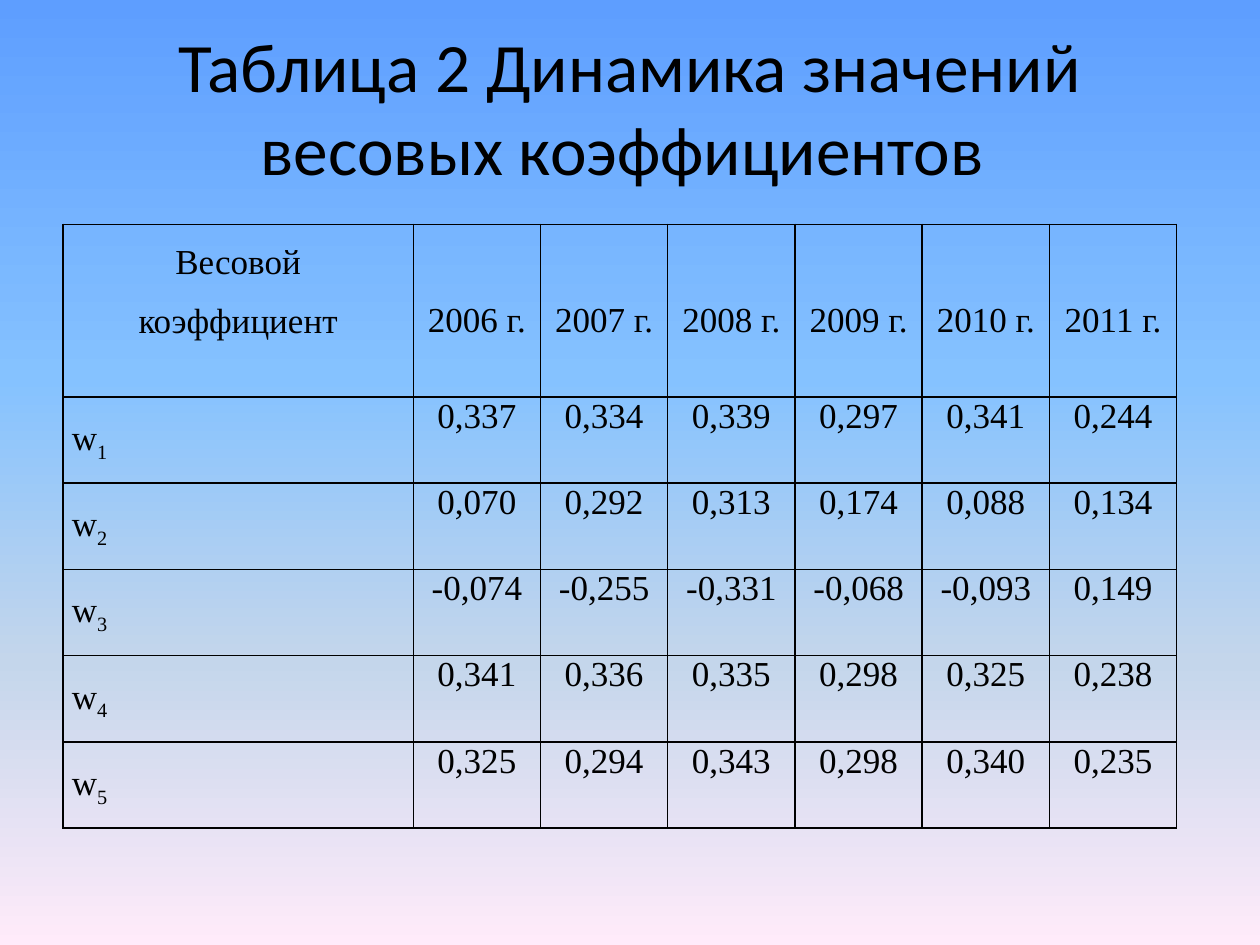
from lxml.etree import SubElement
from pptx import Presentation
from pptx.dml.color import RGBColor
from pptx.enum.text import MSO_ANCHOR, MSO_AUTO_SIZE, PP_ALIGN
from pptx.oxml.ns import qn
from pptx.util import Inches, Pt

CENTER, JUSTIFY = PP_ALIGN.CENTER, PP_ALIGN.JUSTIFY
TOP, MIDDLE = MSO_ANCHOR.TOP, MSO_ANCHOR.MIDDLE
COLORS = {"ink": "000000", "sky": "5E9EFF", "light": "85C2FF",
          "mist": "C4D6EB", "rose": "FFEBFA"}
STOPS = [(0, "sky"), (40, "light"), (70, "mist"), (100, "rose")]
YEARS = range(2006, 2012)
VALUES = [
    ["0,337", "0,334", "0,339", "0,297", "0,341", "0,244"],
    ["0,070", "0,292", "0,313", "0,174", "0,088", "0,134"],
    ["-0,074", "-0,255", "-0,331", "-0,068", "-0,093", "0,149"],
    ["0,341", "0,336", "0,335", "0,298", "0,325", "0,238"],
    ["0,325", "0,294", "0,343", "0,298", "0,340", "0,235"],
]
HEAD, LABEL, YEAR = 2.78, 1.37, 1.01  # first column, first row, year column
ROW = LABEL / 2
INSETS = {"margin_left": Inches(0.07), "margin_right": Inches(0.07),
          "margin_top": 0, "margin_bottom": 0}


def add_run(para, text, font, size):
    run = para.add_run()
    run.text = text
    run.font.name, run.font.size = font, Pt(size)
    run.font.color.rgb = RGBColor.from_string(COLORS["ink"])
    return run


def draw_edges(cell):
    """Give the cell a thin line on all four sides and no fill."""
    props = cell._tc.get_or_add_tcPr()
    for side in ("lnL", "lnR", "lnT", "lnB"):
        line = SubElement(props, qn(f"a:{side}"), w=str(Pt(1)))
        fill = SubElement(line, qn("a:solidFill"))
        SubElement(fill, qn("a:srgbClr"), val=COLORS["ink"])
    cell.fill.background()


prs = Presentation()
prs.slide_width, prs.slide_height = Inches(10), Inches(7.5)
slide = prs.slides.add_slide(prs.slide_layouts[5])

# Background
back = slide.background.fill
back.gradient()
back.gradient_angle = 270
stops = slide.element.find(".//" + qn("a:gsLst"))
stops.clear()
for share, name in STOPS:
    stop = SubElement(stops, qn("a:gs"), pos=str(share * 1000))
    SubElement(stop, qn("a:srgbClr"), val=COLORS[name])

# Title
title = slide.shapes.title
title.left, title.top = Inches(0.5), Inches(0.3)
title.width, title.height = Inches(9), Inches(1.09)
frame = title.text_frame
frame.auto_size, frame.vertical_anchor = MSO_AUTO_SIZE.NONE, MIDDLE
frame.paragraphs[0].alignment = CENTER
add_run(frame.paragraphs[0], "Таблица 2 Динамика значений весовых коэффициентов ",
        "Calibri", 39.6)

# Table
rows = [["Весовой\nкоэффициент"] + [f"{year} г." for year in YEARS]]
rows += [[f"w{num}"] + line for num, line in enumerate(VALUES, 1)]
table = slide.shapes.add_table(
    len(rows), len(rows[0]), Inches(0.5), Inches(1.78),
    Inches(HEAD + YEAR * len(YEARS)), Inches(LABEL + ROW * len(VALUES))).table
table.first_row = table.horz_banding = False
for i, col in enumerate(table.columns):
    col.width = Inches(YEAR if i else HEAD)
for i, row in enumerate(table.rows):
    row.height = Inches(ROW if i else LABEL)

for r, row in enumerate(rows):
    for c, text in enumerate(row):
        cell = table.cell(r, c)
        for name, value in INSETS.items():
            setattr(cell, name, value)
        cell.vertical_anchor = MIDDLE if r == 0 and c else TOP
        draw_edges(cell)
        symbol = r > 0 and c == 0
        for p, line in enumerate(text.split("\n")):
            frame = cell.text_frame
            para = frame.add_paragraph() if p else frame.paragraphs[0]
            para.alignment = JUSTIFY if symbol else CENTER
            if r == 0 or c == 0:
                para.line_spacing = 1.5
            for part in (line if symbol else [line]):
                run = add_run(para, part, "Times New Roman", 20)
                if symbol and part.isdigit():
                    run.font._element.set("baseline", "-25000")

prs.save("out.pptx")
